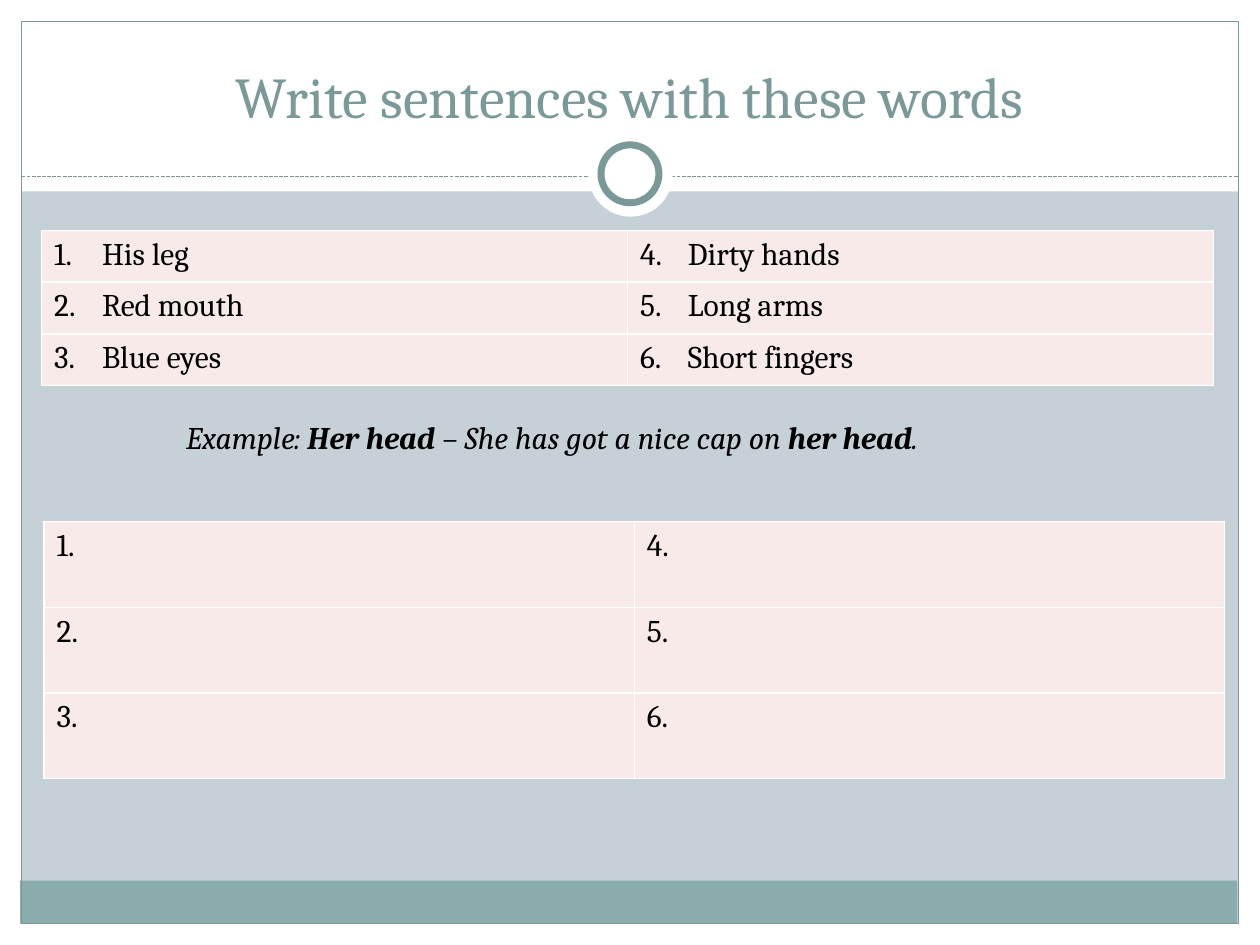
"""Build a worksheet slide with a word list, an example and an answer grid."""
from dataclasses import dataclass
from typing import Optional

from lxml import etree
from pptx import Presentation
from pptx import util as u
from pptx.dml.color import RGBColor
from pptx.enum import dml, shapes, text
from pptx.oxml import ns

FONT = "Cambria"
WHITE, BLACK, TEAL, SAGE = "FFFFFF", "000000", "7C999A", "8CADAE"
MIST, BLUSH = "C5D1D7", "F7EAE9"
RECT, OVAL = shapes.MSO_SHAPE.RECTANGLE, shapes.MSO_SHAPE.OVAL


@dataclass
class Panel:
    left: float
    top: float
    width: float
    height: float
    fill: Optional[str] = WHITE
    line: Optional[str] = None
    weight: float = 0.75
    kind: shapes.MSO_SHAPE = RECT


@dataclass
class Grid:
    left: float
    top: float
    width: float
    row_height: float
    entries: list[str]
    numbered: bool = False


FRAME = [
    Panel(0, 7.33, 10, 0.17),
    Panel(0, 0, 10, 1.52),
    Panel(0, 0, 0.17, 7.5),
    Panel(9.83, 0, 0.17, 7.5),
    Panel(0.16, 6.99, 9.66, 0.34, SAGE),
    Panel(0.17, 0.17, 9.66, 7.16, None, TEAL),
]
RING = [
    Panel(4.67, 1.05, 0.67, 0.67, kind=OVAL),
    Panel(4.77, 1.15, 0.46, 0.46, WHITE, TEAL, 4, OVAL),
]
WORDS = ["His leg", "Red mouth", "Blue eyes", "Dirty hands", "Long arms", "Short fingers"]
GRIDS = [
    Grid(0.33, 1.83, 9.3, 0.41, WORDS, numbered=True),
    Grid(0.35, 4.14, 9.37, 0.68, [f"{number}." for number in range(1, 7)]),
]
EXAMPLE = [
    ("Example: ", False),
    ("Her head ", True),
    ("– She has got a nice cap on ", False),
    ("her head", True),
    (".", False),
]


def colour(value: str) -> RGBColor:
    return RGBColor.from_string(value)


def add_span(para, words: str, size: float = 18, color: str = BLACK,
             bold: bool = False, italic: bool = False) -> None:
    span = para.add_run()
    span.text = words
    span.font.name, span.font.size = FONT, u.Pt(size)
    span.font.bold, span.font.italic = bold, italic
    span.font.color.rgb = colour(color)


def add_panel(page, panel: Panel) -> None:
    shape = page.shapes.add_shape(panel.kind, u.Inches(panel.left), u.Inches(panel.top),
                                  u.Inches(panel.width), u.Inches(panel.height))
    shape.shadow.inherit = False
    if panel.fill:
        shape.fill.solid()
        shape.fill.fore_color.rgb = colour(panel.fill)
    else:
        shape.fill.background()
    if panel.line:
        shape.line.color.rgb = colour(panel.line)
        shape.line.width = u.Pt(panel.weight)
    else:
        shape.line.fill.background()


def add_divider(page, left: float, right: float, top: float) -> None:
    divider = page.shapes.add_connector(shapes.MSO_CONNECTOR.STRAIGHT, u.Inches(left),
                                        u.Inches(top), u.Inches(right), u.Inches(top))
    divider.line.color.rgb = colour(TEAL)
    divider.line.width = u.Pt(0.75)
    divider.line.dash_style = dml.MSO_LINE.SQUARE_DOT
    etree.SubElement(divider.element.spPr, ns.qn("a:effectLst"))


def add_box(page, left: float, top: float, width: float, height: float, wrap: bool):
    box = page.shapes.add_textbox(u.Inches(left), u.Inches(top),
                                  u.Inches(width), u.Inches(height))
    box.text_frame.word_wrap = wrap
    return box.text_frame


def style_cell(cell) -> None:
    cell.fill.solid()
    cell.fill.fore_color.rgb = colour(BLUSH)
    properties = cell._tc.get_or_add_tcPr()
    for position, side in enumerate(("lnL", "lnR", "lnT", "lnB")):
        border = etree.Element(ns.qn(f"a:{side}"), w=str(u.Pt(1)))
        solid = etree.SubElement(border, ns.qn("a:solidFill"))
        etree.SubElement(solid, ns.qn("a:srgbClr"), val=WHITE)
        properties.insert(position, border)


def number_para(para, start: int) -> None:
    properties = para._p.get_or_add_pPr()
    indent = u.Inches(0.38)
    properties.set("marL", str(indent))
    properties.set("indent", str(-indent))
    etree.SubElement(properties, ns.qn("a:buFont"), typeface="+mj-lt")
    etree.SubElement(properties, ns.qn("a:buAutoNum"), type="arabicPeriod", startAt=str(start))


def add_grid(page, grid: Grid, columns: int = 2) -> None:
    rows = len(grid.entries) // columns
    table = page.shapes.add_table(rows, columns, u.Inches(grid.left), u.Inches(grid.top),
                                  u.Inches(grid.width), u.Inches(grid.row_height * rows)).table
    table.first_row = table.horz_banding = False
    for index, entry in enumerate(grid.entries):
        column, row = divmod(index, rows)
        cell = table.cell(row, column)
        style_cell(cell)
        para = cell.text_frame.paragraphs[0]
        if grid.numbered:
            number_para(para, index + 1)
        add_span(para, entry)


def main() -> None:
    deck = Presentation()
    deck.slide_width, deck.slide_height = u.Inches(10), u.Inches(7.5)
    page = deck.slides.add_slide(deck.slide_layouts[6])
    page.background.fill.solid()
    page.background.fill.fore_color.rgb = colour(MIST)

    for panel in FRAME:
        add_panel(page, panel)
    add_divider(page, 0.17, 9.83, 1.4)
    for panel in RING:
        add_panel(page, panel)

    title = add_box(page, 0.33, 0.25, 9.33, 0.83, wrap=True)
    title.vertical_anchor = text.MSO_ANCHOR.BOTTOM
    title.paragraphs[0].alignment = text.PP_ALIGN.CENTER
    add_span(title.paragraphs[0], "Write sentences with these words", size=33, color=TEAL)

    words, answers = GRIDS
    add_grid(page, words)
    example = add_box(page, 1.38, 3.27, 7.1, 0.4, wrap=False)
    example.auto_size = text.MSO_AUTO_SIZE.SHAPE_TO_FIT_TEXT
    for part, bold in EXAMPLE:
        add_span(example.paragraphs[0], part, bold=bold, italic=True)
    add_grid(page, answers)

    deck.save("out.pptx")


if __name__ == "__main__":
    main()
